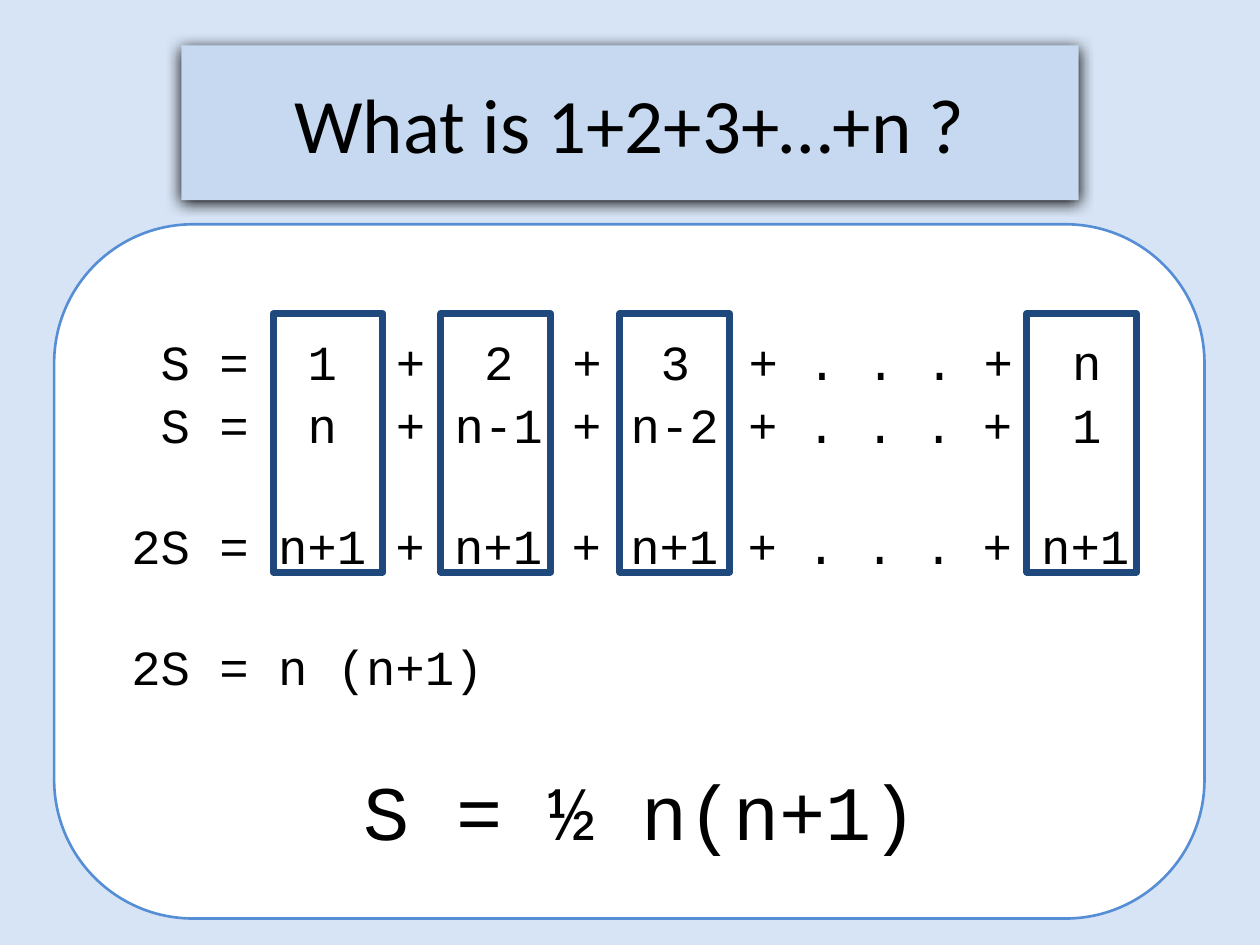
from lxml import etree
from pptx import Presentation
from pptx.dml.color import RGBColor
from pptx.enum.shapes import MSO_SHAPE
from pptx.enum.text import MSO_ANCHOR, PP_ALIGN
from pptx.oxml.ns import qn
from pptx.util import Inches, Pt

RECTANGLE, ROUNDED = MSO_SHAPE.RECTANGLE, MSO_SHAPE.ROUNDED_RECTANGLE
TOP, MIDDLE = MSO_ANCHOR.TOP, MSO_ANCHOR.MIDDLE
LEFT, CENTER = PP_ALIGN.LEFT, PP_ALIGN.CENTER

BLACK = RGBColor(0x00, 0x00, 0x00)
WHITE = RGBColor(0xFF, 0xFF, 0xFF)
PALE_BLUE = RGBColor(0xD7, 0xE4, 0xF5)
LIGHT_BLUE = RGBColor(0xC6, 0xD9, 0xF1)
MID_BLUE = RGBColor(0x55, 0x8E, 0xD5)
NAVY = RGBColor(0x1F, 0x49, 0x7D)

CHAR_WIDTH = 0.6 * 28  # points, for the 28 pt monospaced font
TAB_COLUMNS = (1, 6, 9, 12, 15, 18, 21, 32)  # in characters


class SumSlide:
    title_font = "Calibri"
    formula_font = "Courier New"

    def __init__(self, deck):
        self.page = deck.slides.add_slide(deck.slide_layouts[6])
        fill = self.page.background.fill
        fill.solid()
        fill.fore_color.rgb = PALE_BLUE

    def shape(self, kind, left, top, width, height, fill=None, line=None, weight=1.5):
        shape = self.page.shapes.add_shape(
            kind, Inches(left), Inches(top), Inches(width), Inches(height))
        shape.shadow.inherit = False
        if fill is None:
            shape.fill.background()
        else:
            shape.fill.solid()
            shape.fill.fore_color.rgb = fill
        if line is None:
            shape.line.fill.background()
        else:
            shape.line.color.rgb = line
            shape.line.width = Pt(weight)
        return shape

    def shadow(self, shape):
        effects = shape._element.spPr.find(qn("a:effectLst"))
        outer = etree.SubElement(effects, qn("a:outerShdw"), blurRad=str(Pt(8.5)),
                                 dist=str(Pt(1)), dir="5400000", rotWithShape="0")
        etree.SubElement(outer, qn("a:srgbClr"), val="000000")

    def style(self, para, font, size, align, before=0):
        para.alignment = align
        para.space_before = Pt(before)
        for span in para.runs:
            span.font.name = font
            span.font.size = Pt(size)
            span.font.color.rgb = BLACK

    def tab_stops(self, para):
        stops = etree.SubElement(para._p.get_or_add_pPr(), qn("a:tabLst"))
        for column in TAB_COLUMNS:
            etree.SubElement(stops, qn("a:tab"), pos=str(Pt(column * CHAR_WIDTH)), algn="l")

    def title(self, text):
        banner = self.shape(RECTANGLE, 1.44, 0.36, 7.12, 1.23, LIGHT_BLUE)
        self.shadow(banner)
        frame = banner.text_frame
        frame.text = text
        frame.vertical_anchor = MIDDLE
        self.style(frame.paragraphs[0], self.title_font, 44, CENTER)

    def derivation(self, rows):
        panel = self.shape(ROUNDED, 0.43, 1.78, 9.13, 5.51, WHITE, MID_BLUE)
        panel.adjustments[0] = 0.2
        frame = panel.text_frame
        frame.word_wrap = True
        frame.vertical_anchor = TOP
        frame.margin_left = Inches(0.29)
        frame.margin_top = Inches(0.53)
        frame.text = "\n".join(text for text, *_ in rows)
        for para, (text, size, align, before) in zip(frame.paragraphs, rows):
            self.style(para, self.formula_font, size, align, before)
            if "\t" in text:
                self.tab_stops(para)

    def column_frame(self, left):
        self.shape(RECTANGLE, left, 2.49, 0.87, 2.05, line=NAVY, weight=4)


def main():
    deck = Presentation()
    deck.slide_width, deck.slide_height = Inches(10), Inches(7.5)
    slide = SumSlide(deck)

    slide.title("What is 1+2+3+…+n ?")

    # Rows: text, size, alignment, space before in points
    slide.derivation([
        ("\tS =\t1\t+\t2\t+\t3\t+ . . . +\tn", 28, LEFT, 0),
        ("\tS =\tn\t+ n-1 + n-2 + . . . +\t1", 28, LEFT, 2.5),
        ("2S = n+1 + n+1 + n+1 + . . . + n+1", 28, LEFT, 35.5),
        ("2S = n (n+1)", 28, LEFT, 35.5),
        ("S = ½ n(n+1)", 44, CENTER, 39),
    ])

    # Frames around the pairs that add up to n+1
    for left in (2.17, 3.5, 4.92, 8.15):
        slide.column_frame(left)

    deck.save("out.pptx")


if __name__ == "__main__":
    main()
